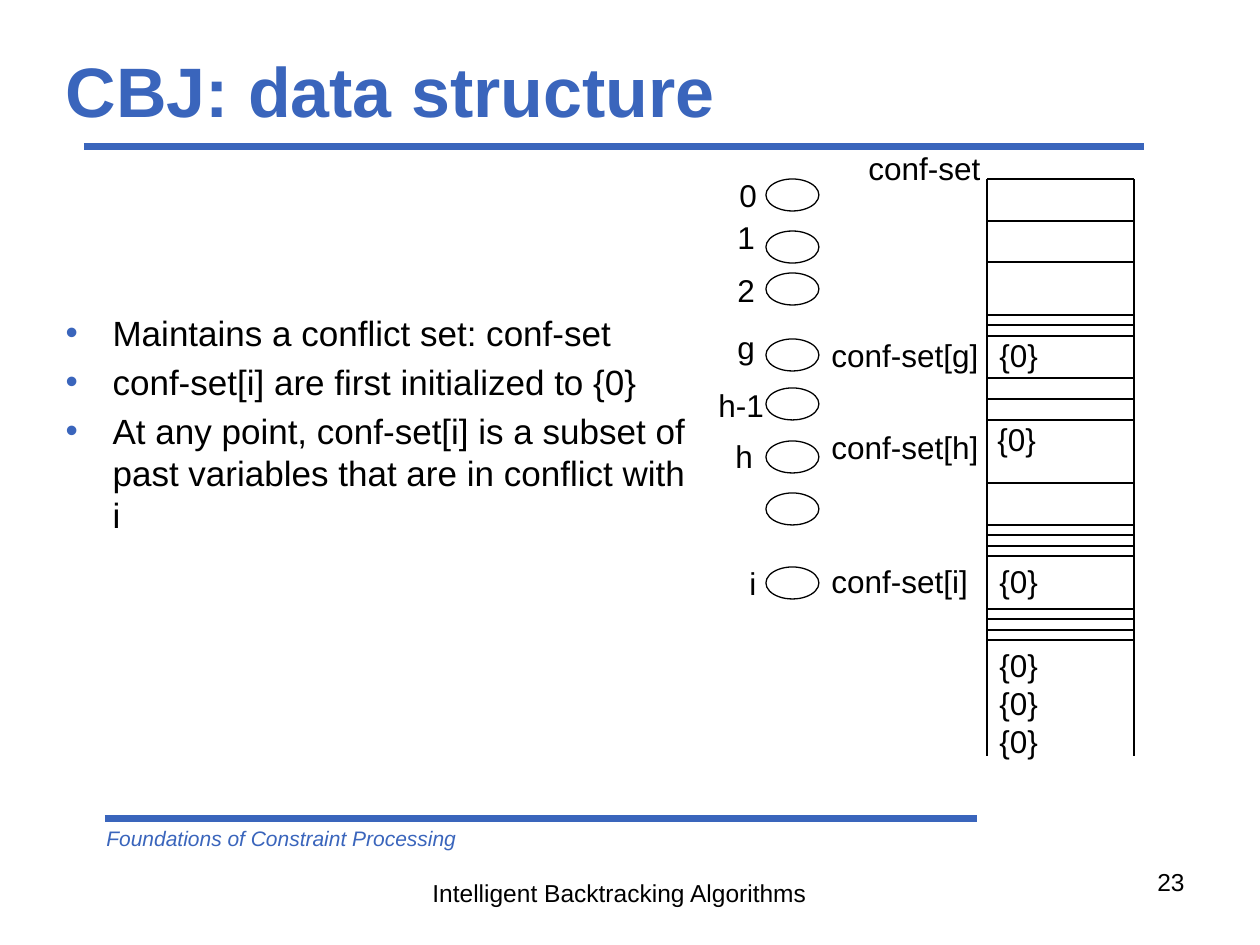
from lxml import etree
from pptx import Presentation
from pptx.dml.color import RGBColor
from pptx.enum.shapes import MSO_CONNECTOR, MSO_SHAPE
from pptx.enum.text import MSO_ANCHOR, MSO_AUTO_SIZE, PP_ALIGN
from pptx.oxml.ns import qn
from pptx.util import Pt

PX = 914400 // 126
BLUE, BLACK = "3A65BC", "000000"

TITLE = "CBJ: data structure"
POINTS = [
    "Maintains a conflict set: conf-set",
    "conf-set[i] are first initialized to {0}",
    "At any point, conf-set[i] is a subset of past variables that are in conflict with i",
]
FOOTERS = [
    (["Foundations of Constraint Processing"], (94, 819, 662, 38),
     dict(size=12, color=BLUE, italic=True)),
    (["Intelligent Backtracking Algorithms"], (420, 872, 402, 43), dict(size=14)),
    (["23"], (903, 861, 294, 65), dict(size=14, align=PP_ALIGN.RIGHT)),
]
RULES = [(84, 147, 1144), (105, 819, 977)]

VARIABLE_TOPS = [179, 231, 273, 339, 388, 441, 493, 567]
VARIABLE_LABELS = [
    ("0", 727, 170, 43), ("1", 725, 212, 43), ("2", 725, 265, 43), ("g", 725, 322, 43),
    ("h-1", 706, 380, 71), ("h", 723, 431, 43), ("i", 737, 558, 44),
]
SET_LABELS = [
    ("conf-set", 856, 143, 137), ("conf-set[g]", 819, 330, 173),
    ("conf-set[h]", 819, 422, 173), ("conf-set[i]", 819, 556, 161),
]
SET_VALUES = [
    (["{0}"], 987, 330), (["{0}"], 985, 414), (["{0}"], 987, 556), (["{0}"] * 3, 987, 640),
]
COLUMN_LEFT, COLUMN_RIGHT, COLUMN_TOP, COLUMN_BOTTOM = 987, 1134, 179, 756
ROW_LINES = [179, 221, 262, 315, 325, 336, 378, 399, 420, 483,
             525, 535, 546, 556, 609, 619, 630, 640]


def rgb(value):
    return RGBColor.from_string(value)


def px(*lengths):
    return [length * PX for length in lengths]


def write(frame, paragraphs, size=18, color=BLACK, bold=False, italic=False,
          align=PP_ALIGN.LEFT, anchor=MSO_ANCHOR.TOP, wrap=True, bullet=None, gap=0):
    frame.auto_size = MSO_AUTO_SIZE.NONE
    frame.word_wrap = wrap
    frame.vertical_anchor = anchor
    for index, text in enumerate(paragraphs):
        paragraph = frame.paragraphs[0] if index == 0 else frame.add_paragraph()
        paragraph.text = text
        paragraph.alignment = align
        paragraph.space_before = Pt(gap if index else 0)
        if bullet:
            properties = paragraph._p.get_or_add_pPr()
            properties.set("marL", str(47 * PX))
            properties.set("indent", str(-47 * PX))
            bullet_color = etree.SubElement(properties, qn("a:buClr"))
            etree.SubElement(bullet_color, qn("a:srgbClr"), val=bullet)
            etree.SubElement(properties, qn("a:buChar"), char="•")
        font = paragraph.runs[0].font
        font.name, font.size = "Arial", Pt(size)
        font.bold, font.italic = bold, italic
        font.color.rgb = rgb(color)


def add_text(slide, paragraphs, box, **style):
    write(slide.shapes.add_textbox(*px(*box)).text_frame, paragraphs, **style)


def add_line(slide, start, end, color=BLACK, width=0.75):
    line = slide.shapes.add_connector(MSO_CONNECTOR.STRAIGHT, *px(*start, *end))
    line.line.color.rgb = rgb(color)
    line.line.width = Pt(width)
    etree.SubElement(line._element.spPr, qn("a:effectLst"))


def fill_placeholder(placeholder, paragraphs, box, **style):
    placeholder.left, placeholder.top, placeholder.width, placeholder.height = px(*box)
    write(placeholder.text_frame, paragraphs, **style)


def add_variable(slide, top):
    oval = slide.shapes.add_shape(MSO_SHAPE.OVAL, *px(766, top, 53, 32))
    oval.shadow.inherit = False
    oval.fill.background()
    oval.line.color.rgb = rgb(BLACK)
    oval.line.width = Pt(0.75)


def main():
    deck = Presentation()
    deck.slide_width, deck.slide_height = px(1260, 945)
    slide = deck.slides.add_slide(deck.slide_layouts[1])

    for left, y, right in RULES:
        add_line(slide, (left, y), (right, y), color=BLUE, width=4)
    for paragraphs, box, style in FOOTERS:
        add_text(slide, paragraphs, box, **style)

    title, body = slide.placeholders
    fill_placeholder(title, [TITLE], (53, 42, 1134, 95), size=40, color=BLUE,
                     bold=True, anchor=MSO_ANCHOR.MIDDLE)
    fill_placeholder(body, POINTS, (53, 305, 662, 267), size=20, bullet=BLUE, gap=4)

    for top in VARIABLE_TOPS:
        add_variable(slide, top)
    for x in (COLUMN_LEFT, COLUMN_RIGHT):
        add_line(slide, (x, COLUMN_TOP), (x, COLUMN_BOTTOM))
    for y in ROW_LINES:
        add_line(slide, (COLUMN_LEFT, y), (COLUMN_RIGHT, y))

    for text, left, top, width in VARIABLE_LABELS + SET_LABELS:
        add_text(slide, [text], (left, top, width, 50), wrap=False)
    for values, left, top in SET_VALUES:
        add_text(slide, values, (left, top, 64, 12 + 38 * len(values)), wrap=False)

    deck.save("out.pptx")


if __name__ == "__main__":
    main()
